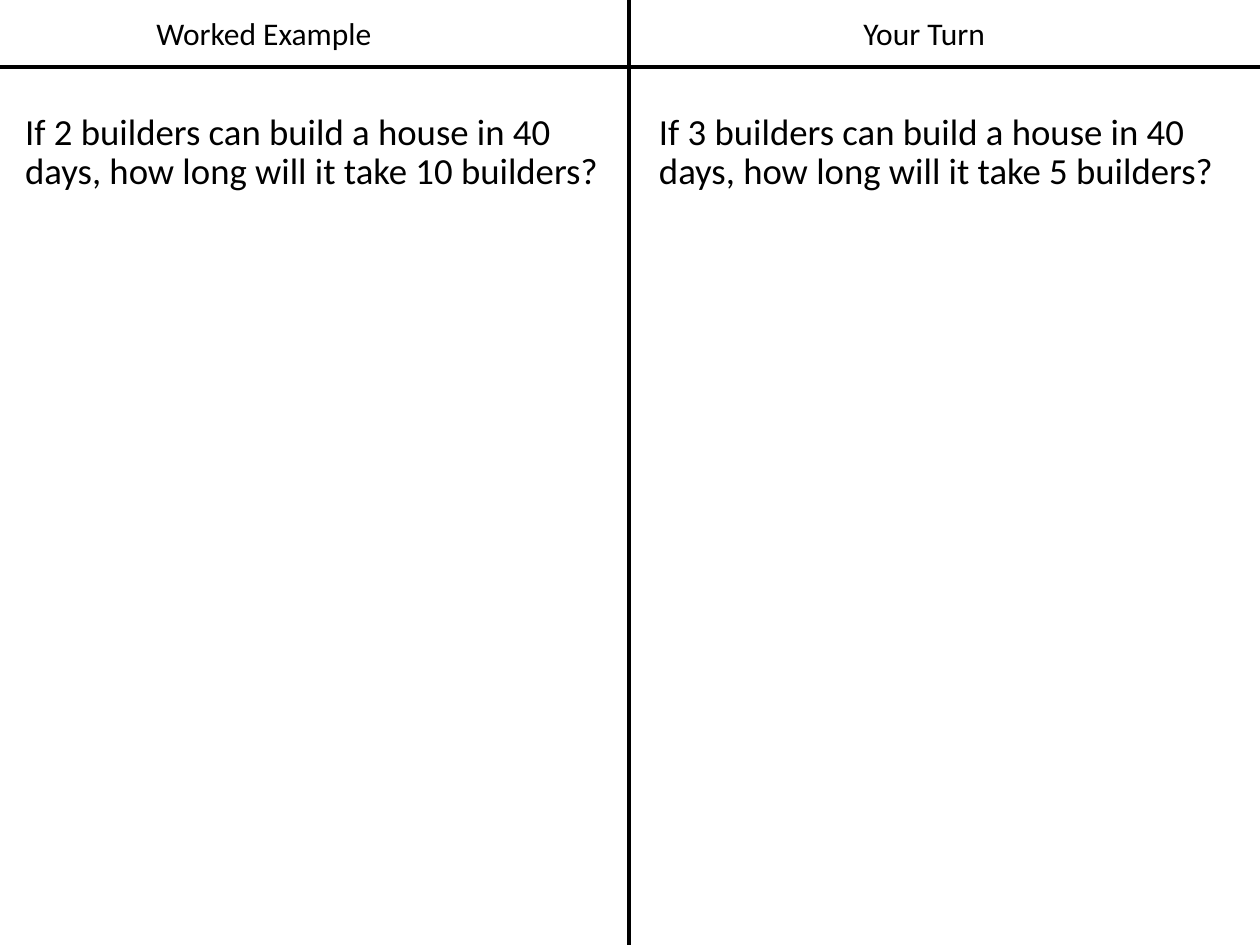
from dataclasses import dataclass

from lxml import etree
from pptx import Presentation
from pptx.dml.color import RGBColor
from pptx.enum.shapes import MSO_CONNECTOR
from pptx.enum.text import MSO_ANCHOR, MSO_AUTO_SIZE, PP_ALIGN
from pptx.oxml.ns import qn
from pptx.util import Inches, Pt


@dataclass(frozen=True)
class Theme:
    font: str = "Calibri"
    ink: RGBColor = RGBColor(0, 0, 0)
    paper: RGBColor = RGBColor(255, 255, 255)
    heading_size: int = 18
    question_size: int = 21
    rule_width: float = 2.5


theme = Theme()


def write(frame, text, size, **paragraph_format):
    """Put one formatted paragraph in a text frame."""
    frame.word_wrap = True
    paragraph = frame.paragraphs[0]
    for name, value in paragraph_format.items():
        setattr(paragraph, name, value)
    run = paragraph.add_run()
    run.text = text
    font_format = {"name": theme.font, "size": Pt(size), "bold": False}
    for name, value in font_format.items():
        setattr(run.font, name, value)
    run.font.color.rgb = theme.ink


deck = Presentation()
deck.slide_width, deck.slide_height = Inches(10), Inches(7.5)
comparison_layout = deck.slide_layouts[4]
slide = deck.slides.add_slide(comparison_layout)
slide.background.fill.solid()
slide.background.fill.fore_color.rgb = theme.paper

# Column headings
for heading, left in (("Worked Example", 1.13), ("Your Turn", 6.37)):
    heading_box = slide.shapes.add_textbox(
        Inches(left), Inches(0.06), Inches(1.93), Inches(0.4))
    write(heading_box.text_frame, heading, theme.heading_size,
          alignment=PP_ALIGN.CENTER)
    heading_box.text_frame.auto_size = MSO_AUTO_SIZE.SHAPE_TO_FIT_TEXT

# Column divider and heading rule
for start_x, start_y, end_x, end_y in ((4.99, 0, 4.99, 7.5), (0, 0.53, 10, 0.53)):
    rule = slide.shapes.add_connector(
        MSO_CONNECTOR.STRAIGHT,
        Inches(start_x), Inches(start_y), Inches(end_x), Inches(end_y))
    rule.line.color.rgb = theme.ink
    rule.line.width = Pt(theme.rule_width)
    etree.SubElement(rule._element.spPr, qn("a:effectLst"))

# Questions, in the two text placeholders of the comparison layout
questions = {1: (0.1, 2, 10), 3: (5.13, 3, 5)}
for placeholder in list(slide.placeholders):
    index = placeholder.placeholder_format.idx
    if index not in questions:
        placeholder._element.getparent().remove(placeholder._element)
        continue
    left, builders, new_builders = questions[index]
    placement = {"left": left, "top": 0.74, "width": 4.77, "height": 0.84}
    for name, value in placement.items():
        setattr(placeholder, name, Inches(value))
    question = (f"If {builders} builders can build a house in 40 days, "
                f"how long will it take {new_builders} builders?")
    write(placeholder.text_frame, question, theme.question_size,
          alignment=PP_ALIGN.LEFT, line_spacing=0.9, space_before=Pt(0))
    placeholder.text_frame.vertical_anchor = MSO_ANCHOR.BOTTOM
    placeholder.text_frame.auto_size = MSO_AUTO_SIZE.NONE

deck.save("out.pptx")
